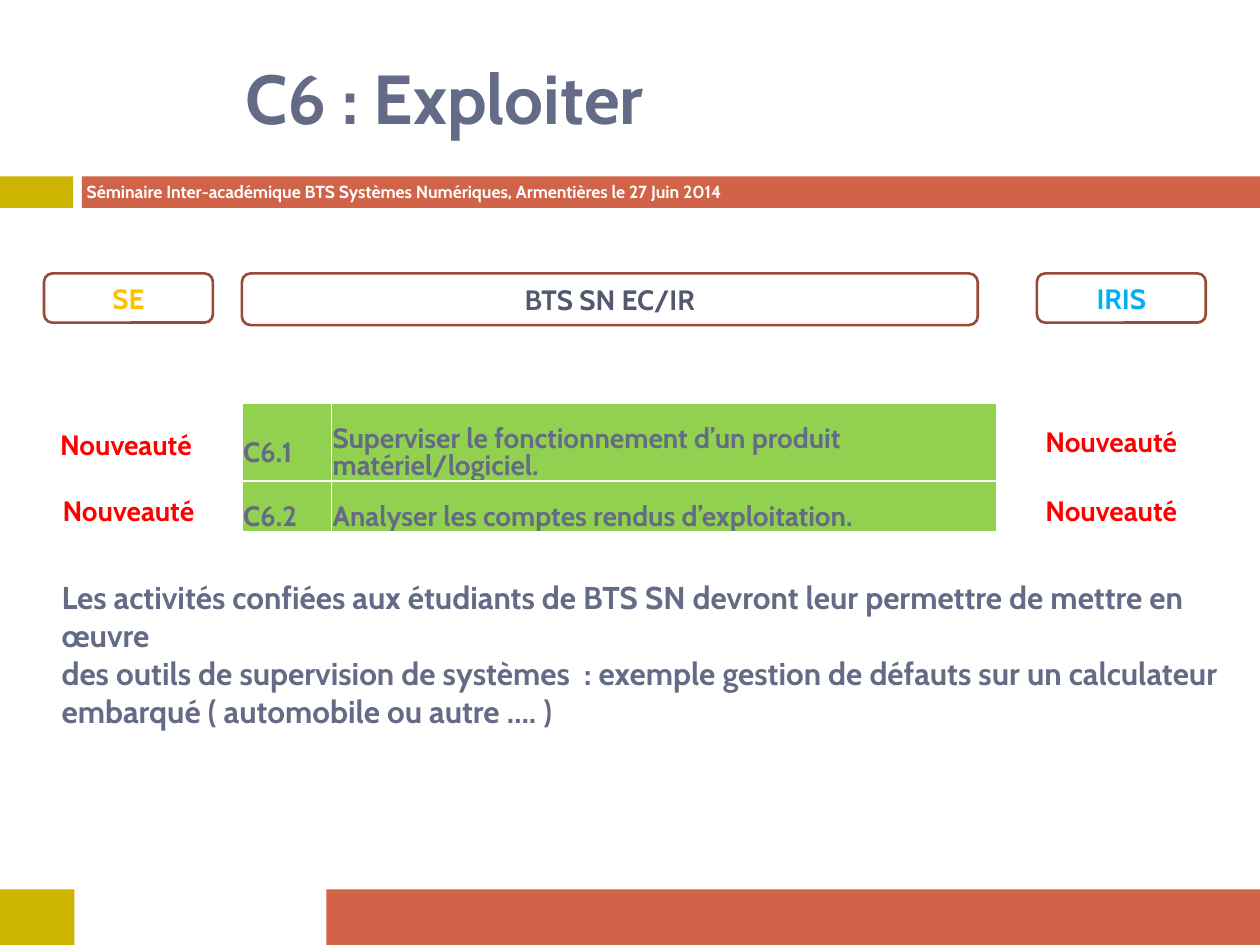
from pptx import Presentation
from pptx.dml.color import RGBColor
from pptx.enum.shapes import MSO_SHAPE
from pptx.enum.text import MSO_ANCHOR, PP_ALIGN
from pptx.util import Inches, Pt

RECT, ROUNDED = MSO_SHAPE.RECTANGLE, MSO_SHAPE.ROUNDED_RECTANGLE
TOP, MIDDLE = MSO_ANCHOR.TOP, MSO_ANCHOR.MIDDLE
LEFT, CENTER, JUSTIFY = PP_ALIGN.LEFT, PP_ALIGN.CENTER, PP_ALIGN.JUSTIFY

FONT = "Cabin"
COLORS = {
    "white": "FFFFFF", "olive": "CCB400", "brick": "D16349", "border": "9A4936",
    "slate": "646B86", "dark": "52586E", "amber": "FFC000", "blue": "00B0F0",
    "red": "FF0000", "green": "92D050",
}

# Content: boxes are (left, top, width, height) in inches
BANDS = [
    ((0, 1.4, 0.58, 0.25), "olive"),
    ((0.65, 1.4, 9.35, 0.25), "brick"),
    ((0, 7.06, 0.59, 0.44), "olive"),
    ((2.59, 7.06, 7.41, 0.44), "brick"),
]
SEMINAR = "Séminaire Inter-académique BTS Systèmes Numériques, Armentières le 27 Juin 2014"
TITLE = "C6 : Exploiter"
HEADINGS = [
    ("SE", (0.35, 2.17, 1.34, 0.39), "amber"),
    ("IRIS", (8.23, 2.17, 1.34, 0.39), "blue"),
    ("BTS SN EC/IR", (1.92, 2.17, 5.84, 0.41), "dark"),
]
SKILLS = [
    ("C6.1", "Superviser le fonctionnement d’un produit matériel/logiciel."),
    ("C6.2", "Analyser les comptes rendus d’exploitation."),
]
COLUMN_WIDTHS = [0.71, 5.28]
ROW_HEIGHTS = [0.61, 0.4]
ACTIVITIES = [
    "Les activités confiées aux étudiants de BTS SN devront leur permettre de mettre en œuvre",
    "des outils de supervision de systèmes  : exemple gestion de défauts sur un calculateur",
    "embarqué ( automobile ou autre …. )",
]
NEW_LABEL = "Nouveauté"
NEW_POSITIONS = [(0.33, 3.39), (0.35, 3.91), (8.15, 3.36), (8.15, 3.91)]


def rgb(name):
    return RGBColor.from_string(COLORS[name])


def write(tf, lines, size, color, align=LEFT, spacing=None):
    tf.word_wrap = True
    for i, line in enumerate(lines):
        p = tf.paragraphs[0] if i == 0 else tf.add_paragraph()
        p.alignment = align
        if spacing:
            p.line_spacing = spacing
        r = p.add_run()
        r.text = line
        r.font.name, r.font.size, r.font.bold = FONT, Pt(size), True
        r.font.color.rgb = rgb(color)


def add_box(s, kind, box, fill, line=None):
    sp = s.shapes.add_shape(kind, *map(Inches, box))
    sp.shadow.inherit = False
    sp.fill.solid()
    sp.fill.fore_color.rgb = rgb(fill)
    if line:
        sp.line.color.rgb = rgb(line)
        sp.line.width = Pt(1.5)
    else:
        sp.line.fill.background()
    return sp


def add_label(s, text, box, color, line):
    sp = add_box(s, ROUNDED, box, "white", line)
    sp.text_frame.vertical_anchor = MIDDLE
    write(sp.text_frame, [text], 16, color, CENTER)


def add_text(s, lines, box, size, color, anchor=TOP):
    tf = s.shapes.add_textbox(*map(Inches, box)).text_frame
    tf.vertical_anchor = anchor
    write(tf, lines, size, color)


def add_skills(s):
    table = s.shapes.add_table(
        len(SKILLS), len(COLUMN_WIDTHS), Inches(1.92), Inches(3.2),
        Inches(sum(COLUMN_WIDTHS)), Inches(sum(ROW_HEIGHTS))).table
    table.first_row = table.horz_banding = False
    for column, width in zip(table.columns, COLUMN_WIDTHS):
        column.width = Inches(width)
    for i, (row, height) in enumerate(zip(table.rows, ROW_HEIGHTS)):
        row.height = Inches(height)
        for cell, text, align in zip(row.cells, SKILLS[i], (JUSTIFY, LEFT)):
            cell.fill.solid()
            cell.fill.fore_color.rgb = rgb("green")
            cell.vertical_anchor = MIDDLE
            cell.margin_left = cell.margin_right = Inches(0.01)
            cell.margin_top, cell.margin_bottom = Inches(0.19), 0
            write(cell.text_frame, [text], 16, "slate", align, 0.8)


def main():
    prs = Presentation()
    prs.slide_width, prs.slide_height = Inches(10), Inches(7.5)
    s = prs.slides.add_slide(prs.slide_layouts[6])

    # Coloured bands, seminar line and title
    for box, fill in BANDS:
        add_box(s, RECT, box, fill)
    add_text(s, [SEMINAR], (0.59, 1.39, 6.06, 0.44), 10, "white")
    add_text(s, [TITLE], (1.85, 0.23, 8.1, 1.08), 39.6, "slate", MIDDLE)

    # Column headings, skills and closing remark
    for text, box, color in HEADINGS:
        add_label(s, text, box, color, "border")
    add_skills(s)
    add_text(s, ACTIVITIES, (0.39, 4.54, 9.39, 1.01), 18, "slate")

    # Novelty labels on both sides of the table
    for left, top in NEW_POSITIONS:
        add_label(s, NEW_LABEL, (left, top, 1.34, 0.28), "red", "white")

    prs.save("out.pptx")


if __name__ == "__main__":
    main()
